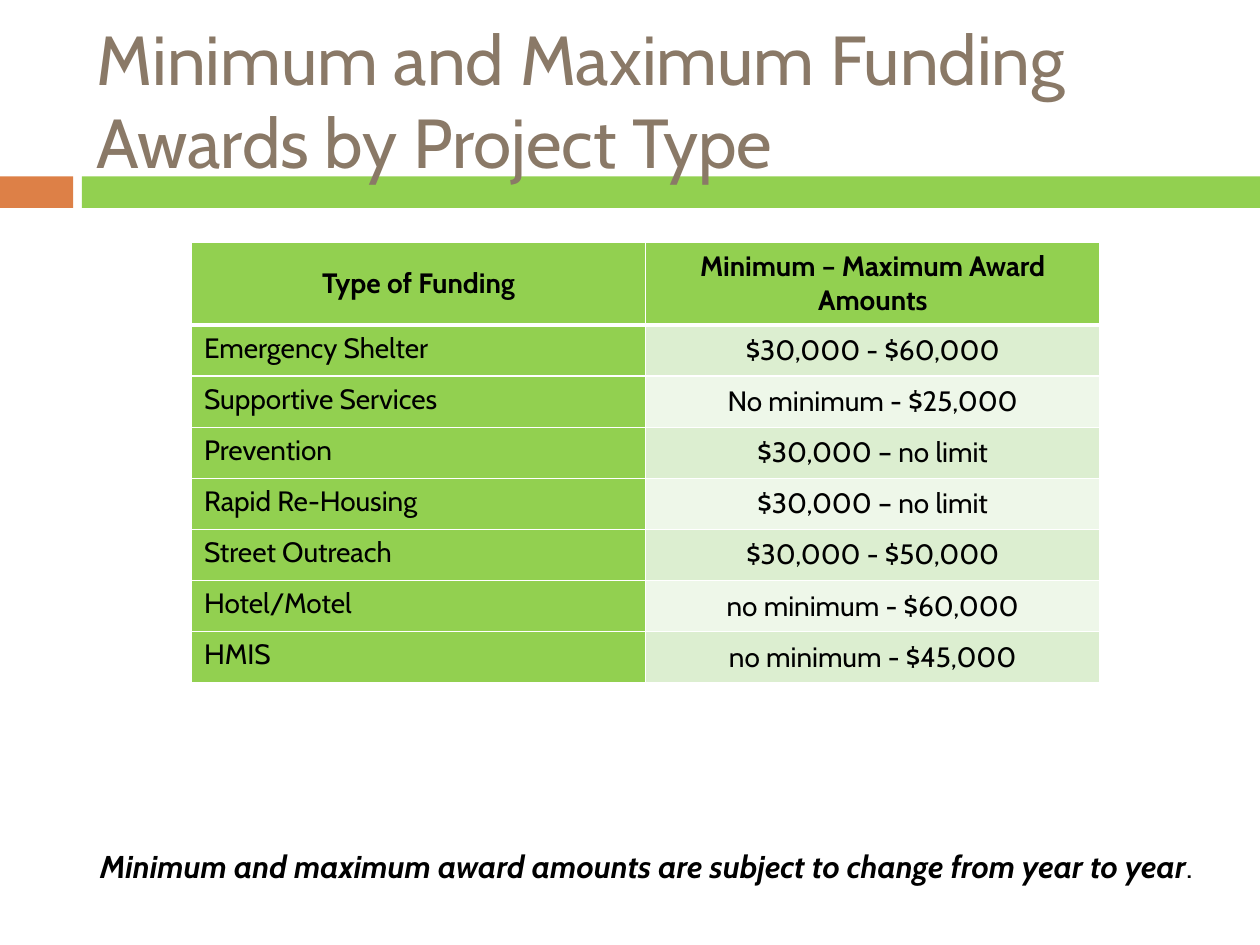
from dataclasses import dataclass

from lxml.etree import SubElement
from pptx import Presentation
from pptx.dml.color import RGBColor
from pptx.enum.shapes import MSO_SHAPE
from pptx.enum.text import MSO_ANCHOR, PP_ALIGN
from pptx.oxml.ns import qn
from pptx.util import Inches, Pt

FONT = "Cabin"
COLORS = {
    "orange": "DD8047",
    "green": "92D050",
    "band_dark": "DCEED0",
    "band_light": "EEF7E9",
    "title": "8A7967",
    "text": "000000",
    "border": "FFFFFF",
}


@dataclass
class Bar:
    left: float
    width: float
    color: str


@dataclass
class Award:
    funding: str
    amounts: str


BARS = [Bar(0, 0.58, "orange"), Bar(0.65, 9.35, "green")]
HEADER = Award("Type of Funding", "Minimum – Maximum Award Amounts")
AWARDS = [
    Award("Emergency Shelter", "$30,000 - $60,000"),
    Award("Supportive Services", "No minimum - $25,000"),
    Award("Prevention", "$30,000 – no limit"),
    Award("Rapid Re-Housing", "$30,000 – no limit"),
    Award("Street Outreach", "$30,000 - $50,000"),
    Award("Hotel/Motel", "no minimum - $60,000"),
    Award("HMIS", "no minimum - $45,000"),
]


def rgb(name: str) -> RGBColor:
    return RGBColor.from_string(COLORS[name])


def style(p, size: float, color: str = "text", align=PP_ALIGN.LEFT) -> None:
    p.alignment = align
    p.font.name = FONT
    p.font.size = Pt(size)
    p.font.color.rgb = rgb(color)


def add_bar(slide, bar: Bar) -> None:
    s = slide.shapes.add_shape(MSO_SHAPE.RECTANGLE, Inches(bar.left), Inches(1.4),
                               Inches(bar.width), Inches(0.25))
    s.shadow.inherit = False
    s.fill.solid()
    s.fill.fore_color.rgb = rgb(bar.color)
    s.line.fill.background()


def add_text(slide, top: float, height: float):
    s = slide.shapes.add_textbox(Inches(0.67), Inches(top), Inches(8.92), Inches(height))
    s.text_frame.word_wrap = True
    return s.text_frame


def set_borders(cell, top: float, bottom: float) -> None:
    tc_pr = cell._tc.get_or_add_tcPr()
    for tag, width in (("lnL", 1), ("lnR", 1), ("lnT", top), ("lnB", bottom)):
        ln = SubElement(tc_pr, qn(f"a:{tag}"), w=str(Pt(width)))
        fill = SubElement(ln, qn("a:solidFill"))
        SubElement(fill, qn("a:srgbClr"), val=COLORS["border"])


def fill_cell(cell, text: str, row: int, col: int) -> None:
    is_header = row == 0
    is_label = col == 0 and not is_header
    set_borders(cell, top=3 if row == 1 else 1, bottom=3 if is_header else 1)
    band = "band_dark" if row % 2 else "band_light"
    cell.fill.solid()
    cell.fill.fore_color.rgb = rgb("green" if is_header or col == 0 else band)
    cell.vertical_anchor = MSO_ANCHOR.TOP if is_label else MSO_ANCHOR.MIDDLE
    cell.text = text
    p = cell.text_frame.paragraphs[0]
    style(p, 16, align=PP_ALIGN.LEFT if is_label else PP_ALIGN.CENTER)
    p.font.bold = is_header


def add_award_table(slide) -> None:
    rows = [HEADER, *AWARDS]
    table = slide.shapes.add_table(len(rows), 2, Inches(1.52), Inches(1.92),
                                   Inches(7.21), Inches(3.5)).table
    for i, award in enumerate(rows):
        table.rows[i].height = Inches(0.66 if i == 0 else (3.5 - 0.66) / len(AWARDS))
        for j, text in enumerate((award.funding, award.amounts)):
            fill_cell(table.cell(i, j), text, i, j)


def main() -> None:
    prs = Presentation()
    prs.slide_width, prs.slide_height = Inches(10), Inches(7.5)
    slide = prs.slides.add_slide(prs.slide_layouts[6])

    # Divider bars
    for bar in BARS:
        add_bar(slide, bar)

    # Title
    tf = add_text(slide, 0.25, 1.08)
    tf.vertical_anchor = MSO_ANCHOR.MIDDLE
    p = tf.paragraphs[0]
    p.text = "Minimum and Maximum Funding Awards by Project Type"
    style(p, 39.6, "title")

    # Footnote
    p = add_text(slide, 6.67, 0.4).paragraphs[0]
    style(p, 18, align=PP_ALIGN.CENTER)
    r = p.add_run()
    r.text = "Minimum and maximum award amounts are subject to change from year to year"
    r.font.bold = r.font.italic = True
    p.add_run().text = "."

    # Award table
    add_award_table(slide)

    prs.save("out.pptx")


if __name__ == "__main__":
    main()
